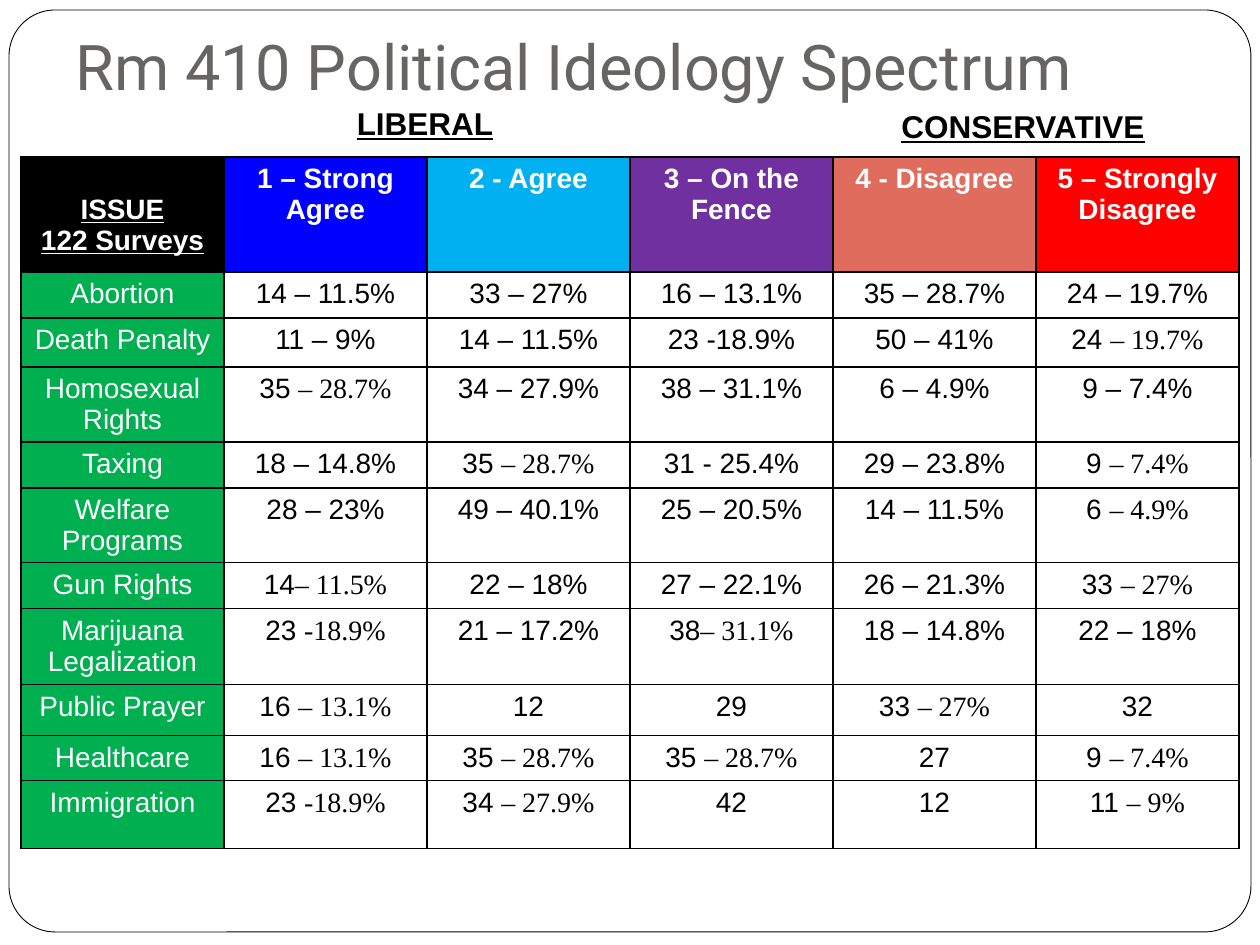
from pptx import Presentation
from pptx import util as u
from pptx.dml.color import RGBColor
from pptx.enum import shapes, text
from pptx.oxml import parse_xml
from pptx.oxml.ns import nsdecls

SCALE = 914400 / 126
BLACK = RGBColor(0x00, 0x00, 0x00)
WHITE = RGBColor(0xFF, 0xFF, 0xFF)
GRAY = RGBColor(0x69, 0x64, 0x64)
GREEN = RGBColor(0x00, 0xB0, 0x50)
BLUE = RGBColor(0x00, 0x00, 0xFF)
SKY = RGBColor(0x00, 0xB0, 0xF0)
PURPLE = RGBColor(0x70, 0x30, 0xA0)
CORAL = RGBColor(0xDF, 0x6C, 0x5D)
RED = RGBColor(0xFF, 0x00, 0x00)

HEADERS = [
    ("ISSUE\n122 Surveys", BLACK),
    ("1 – Strong\nAgree", BLUE),
    ("2 - Agree", SKY),
    ("3 – On the Fence", PURPLE),
    ("4 - Disagree", CORAL),
    ("5 – Strongly\nDisagree", RED),
]
SERIF_MARK = "|"
ISSUES = [
    ("Abortion", "14 – 11.5%", "33 – 27%", "16 – 13.1%", "35 – 28.7%", "24 – 19.7%"),
    ("Death Penalty", "11 – 9%", "14 – 11.5%", "23 -18.9%", "50 – 41%", "24 |– 19.7%"),
    ("Homosexual Rights", "35 |– 28.7%", "34 – 27.9%", "38 – 31.1%", "6 – 4.9%", "9 – 7.4%"),
    ("Taxing", "18 – 14.8%", "35 |– 28.7%", "31 - 25.4%", "29 – 23.8%", "9 |– 7.4%"),
    ("Welfare Programs", "28 – 23%", "49 – 40.1%", "25 – 20.5%", "14 – 11.5%", "6 |– 4.9%"),
    ("Gun Rights", "14|– 11.5%", "22 – 18%", "27 – 22.1%", "26 – 21.3%", "33 |– 27%"),
    ("Marijuana Legalization", "23 |-18.9%", "21 – 17.2%", "38|– 31.1%", "18 – 14.8%", "22 – 18%"),
    ("Public Prayer", "16 |– 13.1%", "12", "29", "33 |– 27%", "32"),
    ("Healthcare", "16 |– 13.1%", "35 |– 28.7%", "35 |– 28.7%", "27", "9 |– 7.4%"),
    ("Immigration", "23 |-18.9%", "34 |– 27.9%", "42", "12", "11 |– 9%"),
]
ROW_HEIGHTS = [115, 46, 49, 74, 46, 75, 46, 76, 51, 45, 68]


def px(length):
    return u.Emu(round(length * SCALE))


def write(frame, content, size=16, color=BLACK, font="Arial", bold=False,
          underline=False, align=text.PP_ALIGN.CENTER):
    for index, line in enumerate(content.split("\n")):
        paragraph = frame.paragraphs[0] if index == 0 else frame.add_paragraph()
        paragraph.alignment = align
        for part, name in zip(line.split(SERIF_MARK), (font, "Times New Roman")):
            run = paragraph.add_run()
            run.text = part
            run.font.name = name
            run.font.size = u.Pt(size)
            run.font.bold = bold
            run.font.underline = underline
            run.font.color.rgb = color


def add_frame(slide, left, top, width, height):
    shape = slide.shapes.add_shape(shapes.MSO_SHAPE.ROUNDED_RECTANGLE,
                                   px(left), px(top), px(width), px(height))
    shape.adjustments[0] = 0.05
    shape.shadow.inherit = False
    shape.fill.solid()
    shape.fill.fore_color.rgb = WHITE
    shape.line.color.rgb = BLACK
    shape.line.width = u.Pt(0.5)
    slide.shapes.element.insert(2, shape.element)


def add_title(slide, left, top, width, height):
    title = slide.shapes.title
    title.left, title.top = px(left), px(top)
    title.width, title.height = px(width), px(height)
    frame = title.text_frame
    frame.vertical_anchor = text.MSO_ANCHOR.BOTTOM
    frame.margin_bottom = u.Inches(0.1)
    write(frame, "\tRm 410 Political Ideology Spectrum", size=36, color=GRAY,
          font="Roboto", align=text.PP_ALIGN.LEFT)


def add_side_label(slide, content, left, top, width, height):
    box = slide.shapes.add_textbox(px(left), px(top), px(width), px(height))
    box.text_frame.word_wrap = True
    write(box.text_frame, content, size=18, bold=True, underline=True)


def format_cell(cell, fill):
    properties = cell._tc.get_or_add_tcPr()
    for side in ("lnL", "lnR", "lnT", "lnB"):
        properties.append(parse_xml(
            f'<a:{side} {nsdecls("a")} w="12700"><a:solidFill>'
            f'<a:srgbClr val="{BLACK}"/></a:solidFill></a:{side}>'))
    if fill is None:
        cell.fill.background()
    else:
        cell.fill.solid()
        cell.fill.fore_color.rgb = fill


def add_survey_table(slide, left, top, width):
    table = slide.shapes.add_table(len(ROW_HEIGHTS), len(HEADERS), px(left), px(top),
                                   px(width), px(sum(ROW_HEIGHTS))).table
    table.first_row = table.horz_banding = False
    for column in table.columns:
        column.width = px(width / len(HEADERS))
    for row, height in zip(table.rows, ROW_HEIGHTS):
        row.height = px(height)
    for index, (label, fill) in enumerate(HEADERS):
        cell = table.cell(0, index)
        format_cell(cell, fill)
        write(cell.text_frame, label, color=WHITE, bold=True, underline=index == 0)
    table.cell(0, 0).margin_top = px(37)
    for row, values in enumerate(ISSUES, 1):
        for column, value in enumerate(values):
            cell = table.cell(row, column)
            format_cell(cell, GREEN if column == 0 else None)
            write(cell.text_frame, value, color=WHITE if column == 0 else BLACK)


def main():
    presentation = Presentation()
    presentation.slide_width, presentation.slide_height = px(1260), px(945)
    slide = presentation.slides.add_slide(presentation.slide_layouts[5])
    add_frame(slide, 9, 10, 1242, 922)
    add_title(slide, 0, 2, 1260, 114)
    add_survey_table(slide, 21, 157, 1218)
    add_side_label(slide, "LIBERAL", 231, 98, 388, 50)
    add_side_label(slide, "CONSERVATIVE", 829, 101, 388, 50)
    presentation.save("out.pptx")


if __name__ == "__main__":
    main()
